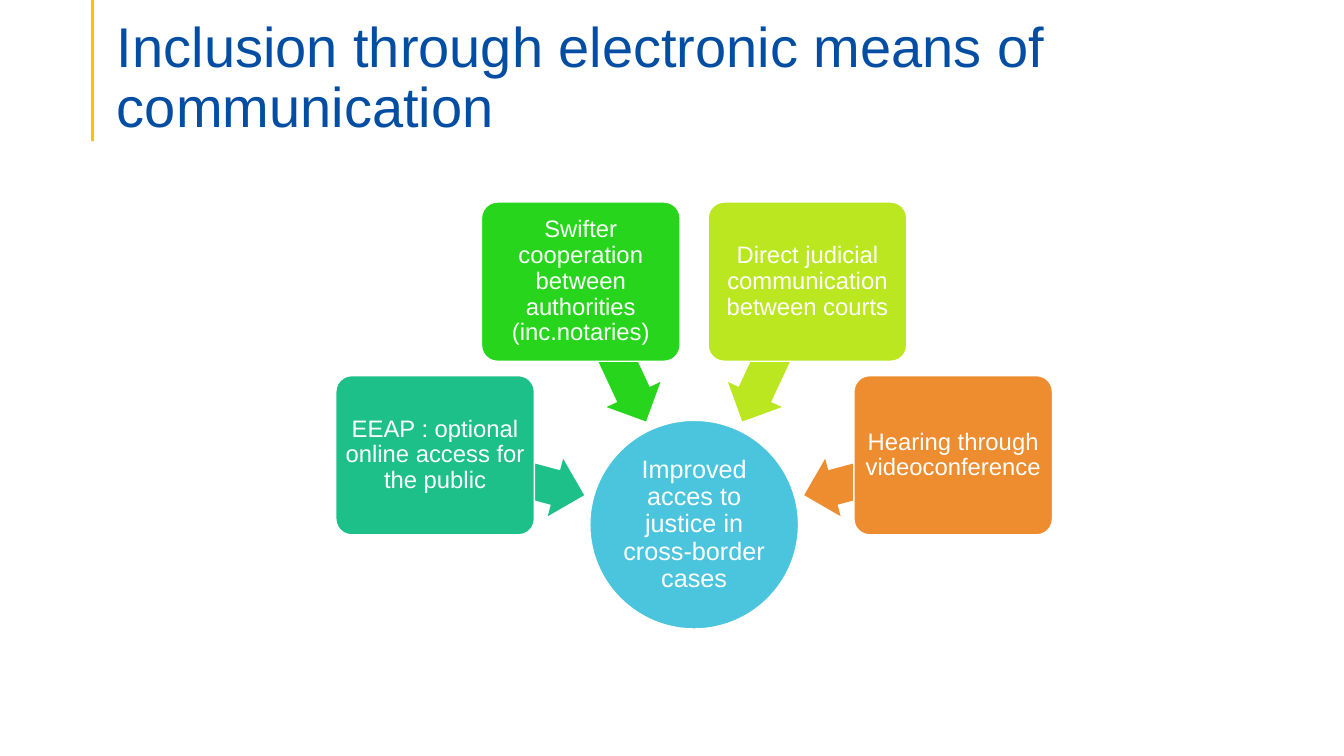
import math

from lxml import etree
from pptx import Presentation
from pptx.dml.color import RGBColor
from pptx.enum import shapes, text
from pptx.oxml import ns
from pptx.util import Inches, Pt

COLORS = {
    "title": "034EA2",
    "rule": "FFC000",
    "white": "FFFFFF",
    "hub": "4BC5DE",
    "access": "1EC08A",
    "cooperation": "27D61C",
    "courts": "BBE721",
    "hearing": "ED8D2F",
}
MEASURES = [
    ("EEAP : optional online access for the public", "access"),
    ("Swifter cooperation between authorities (inc.notaries)", "cooperation"),
    ("Direct judicial communication between courts", "courts"),
    ("Hearing through videoconference", "hearing"),
]


def color(name):
    return RGBColor.from_string(COLORS[name])


def write(shape, wording, size, ink="white", align=text.PP_ALIGN.CENTER,
          anchor=text.MSO_ANCHOR.MIDDLE, insets=(0.04, 0.04, 0.04, 0.04)):
    frame = shape.text_frame
    frame.word_wrap = True
    frame.auto_size = text.MSO_AUTO_SIZE.NONE
    frame.vertical_anchor = anchor
    (frame.margin_left, frame.margin_top,
     frame.margin_right, frame.margin_bottom) = map(Inches, insets)
    paragraph = frame.paragraphs[0]
    paragraph.text = wording
    paragraph.alignment = align
    paragraph.line_spacing = 0.9
    paragraph.font.name = "Arial"
    paragraph.font.size = Pt(size)
    paragraph.font.color.rgb = color(ink)


def add_centered(slide, kind, center, size, fill, outlined=True):
    (x, y), (width, height) = center, size
    shape = slide.shapes.add_shape(
        kind, Inches(x - width / 2), Inches(y - height / 2),
        Inches(width), Inches(height))
    shape.shadow.inherit = False
    shape.fill.solid()
    shape.fill.fore_color.rgb = color(fill)
    if outlined:
        shape.line.color.rgb = color("white")
        shape.line.width = Pt(1)
    else:
        shape.line.fill.background()
    return shape


def add_heading(slide, left, top, width, height):
    rule_x = Inches(left - 0.14)
    rule = slide.shapes.add_connector(
        shapes.MSO_CONNECTOR.STRAIGHT, rule_x, 0, rule_x, Inches(1.4))
    rule.line.color.rgb = color("rule")
    rule.line.width = Pt(2.25)
    etree.SubElement(rule._element.spPr, ns.qn("a:effectLst"))

    title = slide.shapes.title
    title.left, title.top = Inches(left), Inches(top)
    title.width, title.height = Inches(width), Inches(height)
    write(title, "Inclusion through electronic means of communication", 40,
          ink="title", align=text.PP_ALIGN.LEFT,
          anchor=text.MSO_ANCHOR.BOTTOM, insets=(0.1, 0.05, 0.1, 0))


def add_converging_measures(slide, left, top, width, height):
    hub_size = 2.07
    hub_x, hub_y = left + width / 2, top + height - hub_size / 2

    def on_orbit(radius, angle):
        return (hub_x + radius * math.cos(math.radians(angle)),
                hub_y + radius * math.sin(math.radians(angle)))

    hub = add_centered(slide, shapes.MSO_SHAPE.OVAL, (hub_x, hub_y),
                       (hub_size, hub_size), "hub")
    write(hub, "Improved acces to justice in cross-border cases", 18,
          insets=(0.01, 0.01, 0.01, 0.01))

    for index, (wording, fill) in enumerate(MEASURES):
        angle = 195 + 50 * index
        arrow = add_centered(slide, shapes.MSO_SHAPE.LEFT_ARROW,
                             on_orbit(1.9, angle), (1.54, 0.59), fill,
                             outlined=False)
        arrow.adjustments[0] = 0.6
        arrow.adjustments[1] = 0.5
        arrow.rotation = angle
        card = add_centered(slide, shapes.MSO_SHAPE.ROUNDED_RECTANGLE,
                            on_orbit(2.66, angle), (1.97, 1.58), fill)
        card.adjustments[0] = 0.1
        write(card, wording, 17)


def main():
    deck = Presentation()
    deck.slide_width, deck.slide_height = Inches(13.33), Inches(7.5)
    slide = deck.slides.add_slide(deck.slide_layouts[5])
    add_heading(slide, 1.06, 0.53, 11.5, 0.86)
    add_converging_measures(slide, 3.32, 2, 7.13, 4.24)
    deck.save("out.pptx")


if __name__ == "__main__":
    main()
